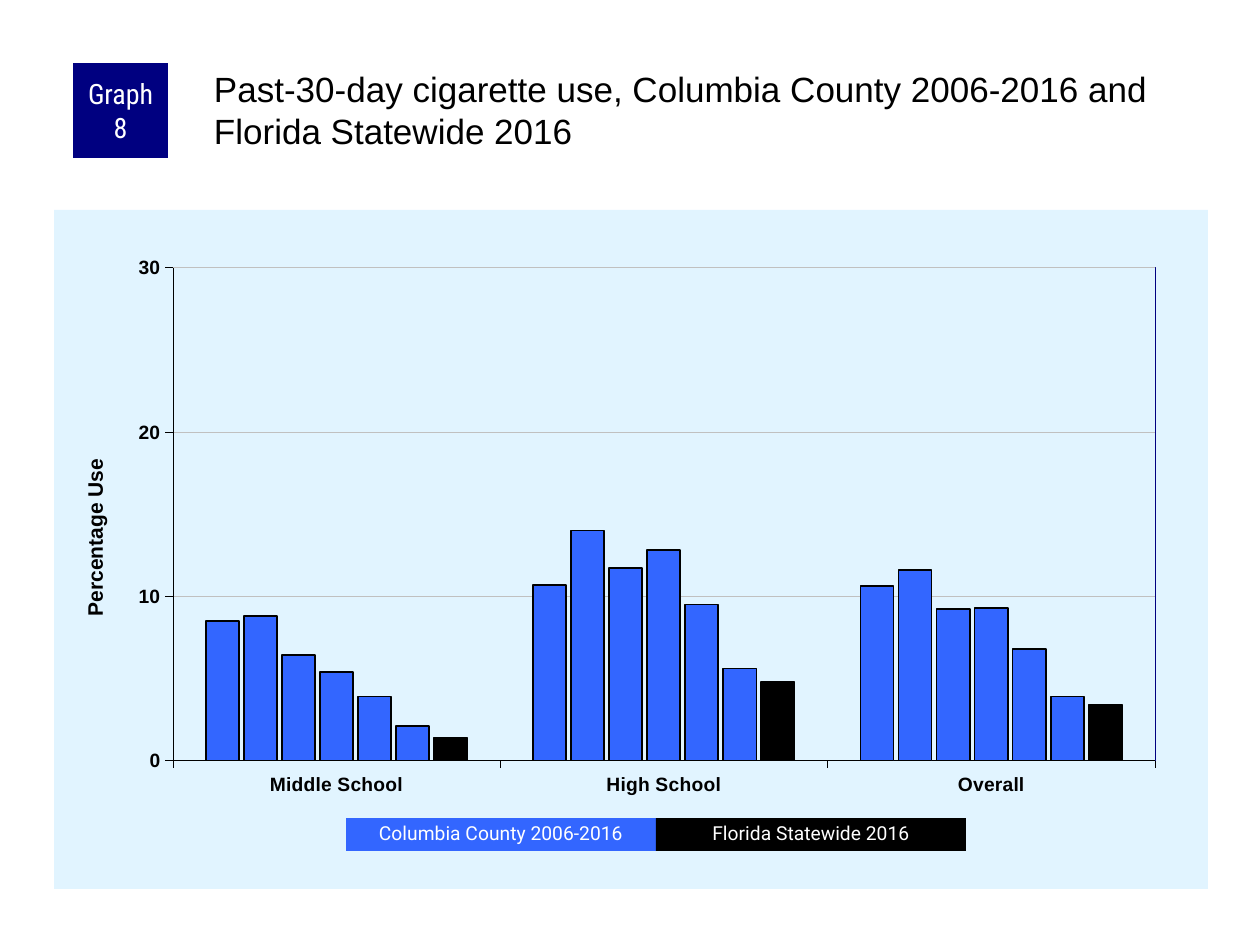
from dataclasses import dataclass

import lxml.etree
import pptx
import pptx.chart.data
import pptx.dml.color
import pptx.enum.chart
import pptx.enum.shapes
import pptx.enum.text
import pptx.oxml
import pptx.oxml.ns
import pptx.util

EMU_PER_PX = 914400 / 126


@dataclass(frozen=True)
class Theme:
    black: str = "000000"
    white: str = "FFFFFF"
    navy: str = "000080"
    blue: str = "3366FF"
    panel: str = "E1F4FF"
    grid: str = "C0C0C0"
    body_font: str = "Arial"
    legend_font: str = "Roboto"
    badge_font: str = "Roboto Condensed"
    title_size: int = 20
    badge_size: int = 16
    axis_title_size: int = 12
    label_size: int = 11
    chart_size: int = 8
    hairline: float = 0.25
    bar_line: float = 1


@dataclass(frozen=True)
class Box:
    left: int
    top: int
    width: int
    height: int


@dataclass(frozen=True)
class Label:
    text: str
    box: Box
    fill: str
    font: str
    size: int
    margin: tuple[int, int]
    line_spacing: float = 1.0


@dataclass(frozen=True)
class Series:
    name: str
    values: tuple[float, ...]
    color: str


THEME = Theme()
CHART_BOX = Box(54, 210, 1154, 679)
PLOT_BOX = Box(173, 268, 982, 493)
AXIS_TITLE_BOX = Box(78, 455, 0, 0)
TITLE_BOX = Box(210, 63, 998, 105)
CATEGORIES = ("Middle School", "High School", "Overall")
COUNTY_VALUES = (
    (8.5, 10.7, 10.6),
    (8.8, 14, 11.6),
    (6.4, 11.7, 9.2),
    (5.4, 12.8, 9.3),
    (3.9, 9.5, 6.8),
    (2.1, 5.6, 3.9),
)
STATE_VALUES = (1.4, 4.8, 3.4)
SERIES = [
    Series(f"Series {number}", values, THEME.blue)
    for number, values in enumerate(COUNTY_VALUES, 1)
] + [Series("Series 7", STATE_VALUES, THEME.black)]
LEGEND_WIDTH = 310
LABELS = [Label("Graph 8", Box(73, 63, 95, 95), THEME.navy,
                THEME.badge_font, THEME.badge_size, (6, 0))] + [
    Label(text, Box(346 + index * LEGEND_WIDTH, 818, LEGEND_WIDTH, 33), fill,
          THEME.legend_font, THEME.label_size, (13, 6), 0.9)
    for index, (text, fill) in enumerate((
        ("Columbia County 2006-2016", THEME.blue),
        ("Florida Statewide 2016", THEME.black),
    ))
]


def px(length: int) -> int:
    return round(length * EMU_PER_PX)


def place(box: Box) -> tuple[int, int, int, int]:
    return px(box.left), px(box.top), px(box.width), px(box.height)


def rgb(color: str) -> pptx.dml.color.RGBColor:
    return pptx.dml.color.RGBColor.from_string(color)


def style_font(font, name: str, size: int, color: str, bold: bool = False) -> None:
    font.name = name
    font.size = pptx.util.Pt(size)
    font.bold = bold
    font.color.rgb = rgb(color)


def style_line(line, color: str, width: float) -> None:
    line.color.rgb = rgb(color)
    line.width = pptx.util.Pt(width)


def add_fill_xml(parent, color: str, line_xml: str) -> None:
    fill_xml = f'<a:solidFill><a:srgbClr val="{color}"/></a:solidFill>' if color else "<a:noFill/>"
    parent.append(pptx.oxml.parse_xml(
        f'<c:spPr {pptx.oxml.ns.nsdecls("c", "a")}>{fill_xml}{line_xml}</c:spPr>'))


def set_layout(element, box: Box) -> None:
    for old in element.findall(pptx.oxml.ns.qn("c:layout")):
        element.remove(old)
    fractions = {
        "x": (box.left - CHART_BOX.left) / CHART_BOX.width,
        "y": (box.top - CHART_BOX.top) / CHART_BOX.height,
    }
    target = ""
    if box.width:
        target = '<c:layoutTarget val="inner"/>'
        fractions["w"] = box.width / CHART_BOX.width
        fractions["h"] = box.height / CHART_BOX.height
    modes = "".join(f'<c:{key}Mode val="edge"/>' for key in "xy")
    values = "".join(f'<c:{key} val="{value:.3f}"/>' for key, value in fractions.items())
    layout = pptx.oxml.parse_xml(
        f'<c:layout {pptx.oxml.ns.nsdecls("c")}><c:manualLayout>'
        f'{target}{modes}{values}</c:manualLayout></c:layout>')
    text = element.find(pptx.oxml.ns.qn("c:tx"))
    element.insert(0 if text is None else 1, layout)


def add_label(slide, label: Label) -> None:
    shape = slide.shapes.add_shape(
        pptx.enum.shapes.MSO_SHAPE.RECTANGLE, *place(label.box))
    shape.shadow.inherit = False
    shape.fill.solid()
    shape.fill.fore_color.rgb = rgb(label.fill)
    shape.line.fill.background()
    frame = shape.text_frame
    frame.text = label.text
    frame.word_wrap = True
    frame.vertical_anchor = pptx.enum.text.MSO_ANCHOR.MIDDLE
    frame.margin_left = frame.margin_right = px(label.margin[0])
    frame.margin_top = frame.margin_bottom = px(label.margin[1])
    paragraph = frame.paragraphs[0]
    paragraph.alignment = pptx.enum.text.PP_ALIGN.CENTER
    paragraph.line_spacing = label.line_spacing
    style_font(paragraph.runs[0].font, label.font, label.size, THEME.white)


def add_title(slide, text: str) -> None:
    frame = slide.shapes.add_textbox(*place(TITLE_BOX)).text_frame
    frame.text = text
    frame.word_wrap = True
    frame.margin_left = frame.margin_top = px(4)
    frame.margin_right = frame.margin_bottom = 0
    style_font(frame.paragraphs[0].runs[0].font, THEME.body_font, THEME.title_size, THEME.black)


def add_usage_chart(slide) -> None:
    data = pptx.chart.data.CategoryChartData()
    data.categories = CATEGORIES
    for series in SERIES:
        data.add_series(series.name, series.values)
    chart = slide.shapes.add_chart(
        pptx.enum.chart.XL_CHART_TYPE.COLUMN_CLUSTERED, *place(CHART_BOX), data).chart
    chart.has_legend = False
    chart.has_title = False
    style_font(chart.font, THEME.body_font, THEME.chart_size, THEME.black)
    plot = chart.plots[0]
    plot.gap_width = 200
    plot.overlap = -15
    plot.vary_by_categories = False
    for drawn, series in zip(plot.series, SERIES):
        drawn.format.fill.solid()
        drawn.format.fill.fore_color.rgb = rgb(series.color)
        style_line(drawn.format.line, THEME.black, THEME.bar_line)
    for axis in (chart.category_axis, chart.value_axis):
        axis.major_tick_mark = pptx.enum.chart.XL_TICK_MARK.OUTSIDE
        style_font(axis.tick_labels.font, THEME.body_font, THEME.label_size, THEME.black, True)
        style_line(axis.format.line, THEME.black, THEME.hairline)
    axis = chart.value_axis
    axis.minimum_scale, axis.maximum_scale, axis.major_unit = 0, 30, 10
    style_line(axis.major_gridlines.format.line, THEME.grid, THEME.hairline)
    frame = axis.axis_title.text_frame
    frame.text = "Percentage Use"
    style_font(frame.paragraphs[0].runs[0].font, THEME.body_font,
               THEME.axis_title_size, THEME.black, True)
    properties = frame._txBody.bodyPr
    properties.set("rot", "-5400000")
    properties.set("vert", "horz")
    set_layout(axis.axis_title._element, AXIS_TITLE_BOX)
    chart_space = chart._chartSpace
    plot_area = chart_space.chart.plotArea
    set_layout(plot_area, PLOT_BOX)
    border = (f'<a:ln w="{pptx.util.Pt(THEME.hairline)}"><a:solidFill>'
              f'<a:srgbClr val="{THEME.navy}"/></a:solidFill></a:ln>')
    add_fill_xml(plot_area, "", border)
    add_fill_xml(chart_space, THEME.panel, "<a:ln><a:noFill/></a:ln>")
    chart_space.chart.addnext(chart_space[-1])


def main() -> None:
    presentation = pptx.Presentation()
    presentation.slide_width = px(1260)
    presentation.slide_height = px(945)
    slide = presentation.slides.add_slide(presentation.slide_layouts[6])
    add_usage_chart(slide)
    add_title(slide, "Past-30-day cigarette use, Columbia County 2006-2016 and Florida Statewide 2016")
    for label in LABELS:
        add_label(slide, label)
    presentation.save("out.pptx")


if __name__ == "__main__":
    main()
